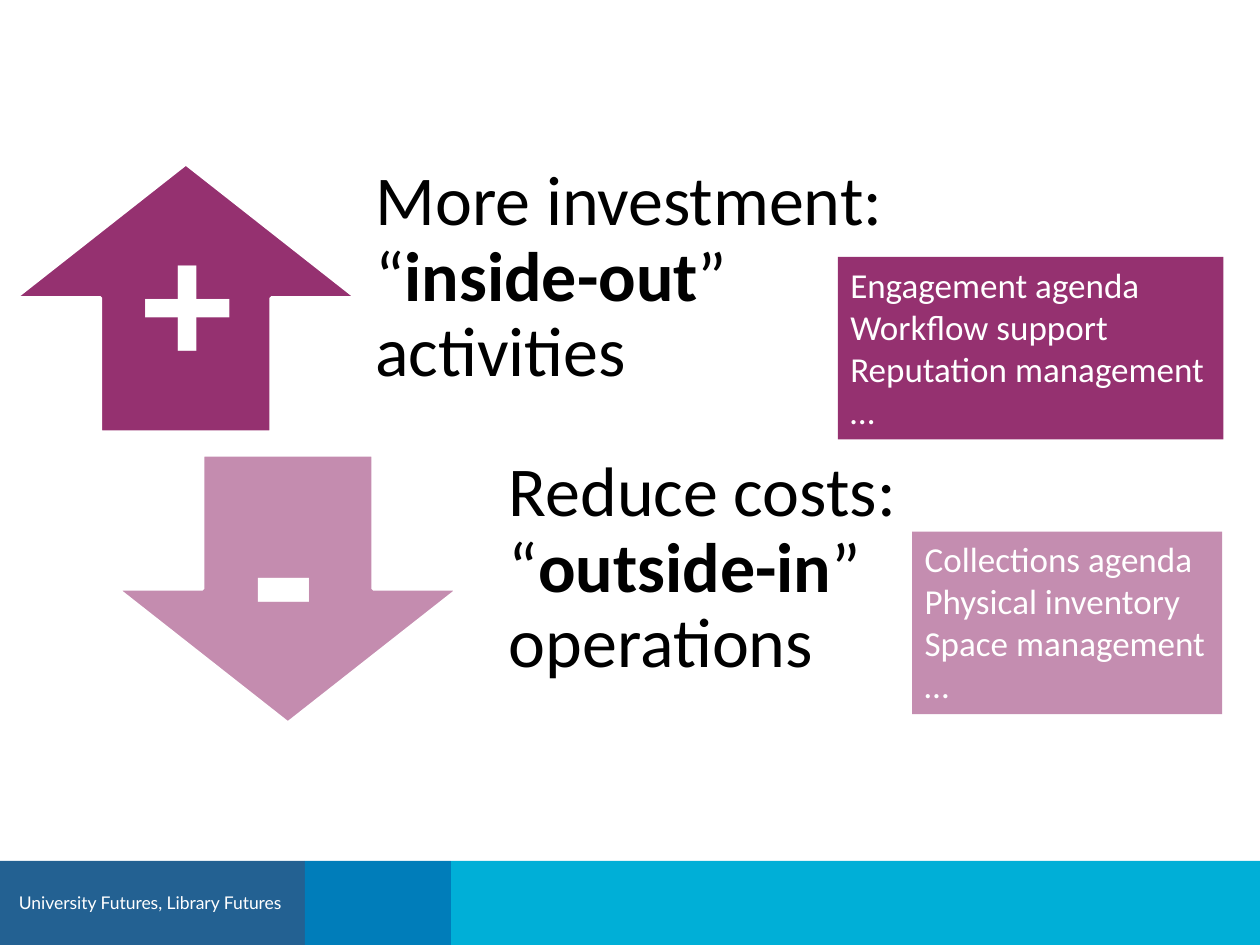
import collections
import pptx
import pptx.util
import pptx.dml.color
import pptx.enum.shapes
import pptx.enum.text
import pptx.oxml
import pptx.oxml.ns

COLORS = {
    "navy": "236192", "blue": "007DBA", "cyan": "00AFD7",
    "plum": "8A1B61", "plum_dark": "953170", "plum_light": "C48DB0",
    "white": "FFFFFF", "black": "000000",
}
Box = collections.namedtuple("Box", "left top width height")
Shape = pptx.enum.shapes.MSO_SHAPE
Anchor = pptx.enum.text.MSO_ANCHOR
Align = pptx.enum.text.PP_ALIGN


def part(box, left, top, width, height):
    return Box(int(box.left + box.width * left / 100),
               int(box.top + box.height * top / 100),
               int(box.width * width / 100),
               int(box.height * height / 100))


def rgb(name):
    return pptx.dml.color.RGBColor.from_string(COLORS[name])


def add_block(slide, box, kind, color):
    block = slide.shapes.add_shape(kind, *box)
    block.shadow.inherit = False
    block.fill.solid()
    block.fill.fore_color.rgb = rgb(color)
    block.line.fill.background()
    return block


def add_run(paragraph, text, size, color, font="Calibri", bold=False):
    run = paragraph.add_run()
    run.text = text
    run.font.name = font
    run.font.size = pptx.util.Pt(size)
    run.font.bold = bold
    run.font.color.rgb = rgb(color)


def add_arrow(slide, box, kind, opacity):
    arrow = add_block(slide, box, kind, "plum")
    arrow.line.color.rgb = rgb("white")
    arrow.line.width = pptx.util.Pt(2)
    tint = arrow.fill._xPr.find(pptx.oxml.ns.qn("a:solidFill"))[0]
    alpha = pptx.oxml.parse_xml(
        f'<a:alpha {pptx.oxml.ns.nsdecls("a")} val="{opacity * 1000}"/>')
    tint.append(alpha)


def add_message(slide, box, before, term, after):
    frame = slide.shapes.add_textbox(*box).text_frame
    frame.word_wrap = True
    frame.vertical_anchor = Anchor.MIDDLE
    frame.margin_left = frame.margin_right = frame.margin_bottom = pptx.util.Inches(0.31)
    frame.margin_top = 0
    message = frame.paragraphs[0]
    message.line_spacing = 0.9
    for text, bold in ((before, False), (term, True), (after, False)):
        add_run(message, text, 40, "black", bold=bold)


def add_sign(slide, box, sign, size):
    frame = slide.shapes.add_textbox(*box).text_frame
    frame.word_wrap = False
    add_run(frame.paragraphs[0], sign, size, "white", "Arial", True)


def add_agenda(slide, box, color, items):
    frame = add_block(slide, box, Shape.RECTANGLE, color).text_frame
    frame.word_wrap = False
    frame.vertical_anchor = Anchor.TOP
    for index, item in enumerate(items):
        line = frame.add_paragraph() if index else frame.paragraphs[0]
        line.alignment = Align.LEFT
        add_run(line, item, 20, "white")


def add_direction(slide, box, direction):
    add_arrow(slide, part(box, *direction["arrow_at"]), direction["arrow"], direction["opacity"])
    add_message(slide, part(box, *direction["message_at"]), *direction["message"])
    add_sign(slide, part(box, *direction["sign_at"]), direction["sign"], direction["sign_size"])
    add_agenda(slide, part(box, *direction["agenda_at"]), direction["color"], direction["agenda"])


def add_footer(slide, box, title):
    left = 0
    for color, width in (("navy", 24.2), ("blue", 11.6), ("cyan", 64.2)):
        band = add_block(slide, part(box, left, 0, width, 100), Shape.RECTANGLE, color)
        if left == 0:
            frame = band.text_frame
            frame.margin_left = pptx.util.Inches(0.15)
            frame.margin_right = 0
            frame.vertical_anchor = Anchor.MIDDLE
            frame.paragraphs[0].alignment = Align.LEFT
            add_run(frame.paragraphs[0], title, 10, "white", "Lato")
        left += width


DIRECTIONS = [
    {
        "arrow": Shape.UP_ARROW, "opacity": 90, "arrow_at": (1.2, 0, 27.1, 100),
        "message": ("More investment: “", "inside-out", "” activities"),
        "message_at": (26.7, 0, 51, 100),
        "sign": "+", "sign_size": 96, "sign_at": (10, 10, 9.9, 81),
        "color": "plum_dark", "agenda_at": (66.5, 34.7, 30.6, 68),
        "agenda": ("Engagement agenda", "Workflow support", "Reputation management", "…"),
    },
    {
        "arrow": Shape.DOWN_ARROW, "opacity": 50, "arrow_at": (9.3, 0, 27.1, 100),
        "message": ("Reduce costs: “", "outside-in", "” operations"),
        "message_at": (37.3, 0, 46, 100),
        "sign": "-", "sign_size": 115, "sign_at": (18.9, -7.5, 7.4, 96),
        "color": "plum_light", "agenda_at": (72.4, 28.6, 24.6, 68),
        "agenda": ("Collections agenda", "Physical inventory", "Space management", "…"),
    },
]


def main():
    deck = pptx.Presentation()
    deck.slide_width = pptx.util.Inches(10)
    deck.slide_height = pptx.util.Inches(7.5)
    slide = deck.slides.add_slide(deck.slide_layouts[6])
    page = Box(0, 0, deck.slide_width, deck.slide_height)
    add_footer(slide, part(page, 0, 91.1, 100, 8.9), "University Futures, Library Futures")
    for row, direction in enumerate(DIRECTIONS):
        add_direction(slide, part(page, 0, 17.33 + row * 30.8, 100, 28.4), direction)
    deck.save("out.pptx")


if __name__ == "__main__":
    main()
